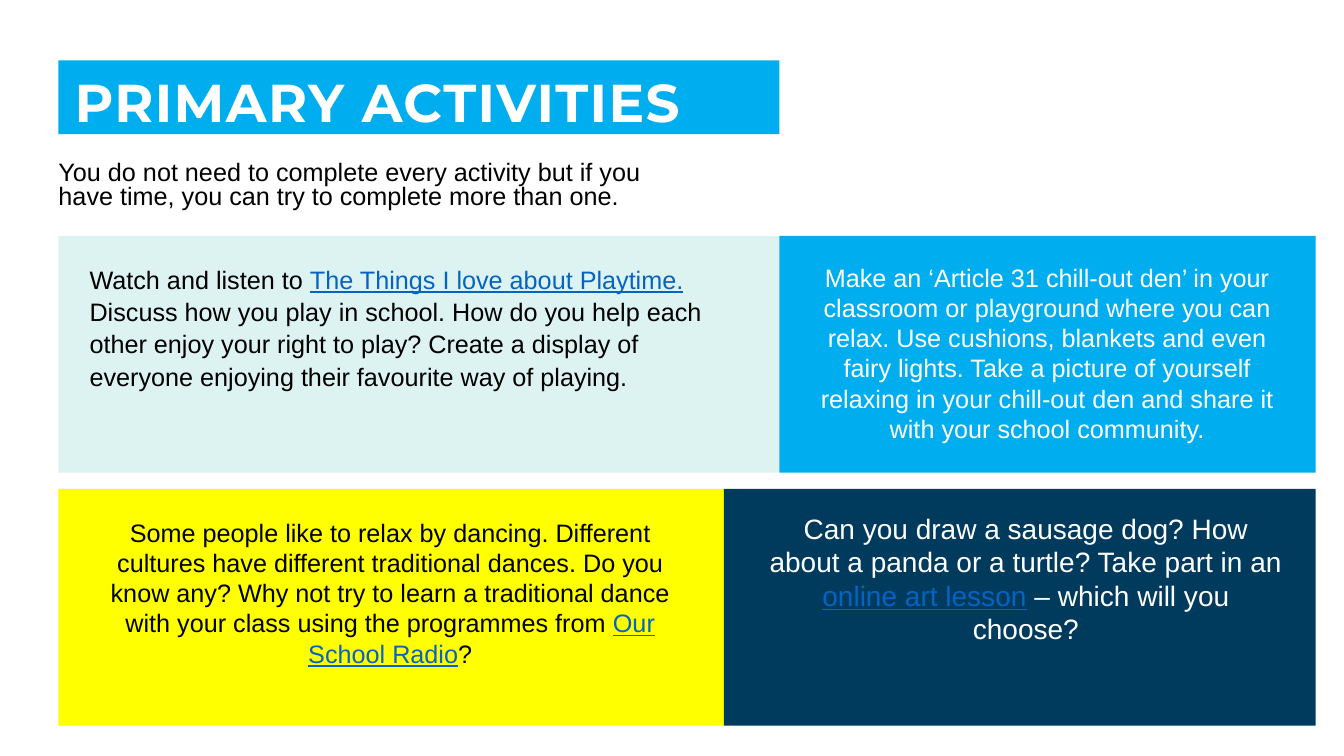
from dataclasses import dataclass
from typing import Any

from pptx import Presentation
from pptx.dml.color import RGBColor as Rgb
from pptx.enum.shapes import MSO_SHAPE as Shape
from pptx.enum.text import MSO_ANCHOR as Anchor, MSO_AUTO_SIZE as Fit, PP_ALIGN as Align
from pptx.util import Inches, Pt

Box = tuple[float, float, float, float]


@dataclass(frozen=True)
class Theme:
    sky: str = "00AEEF"
    mint: str = "DDF3F1"
    yellow: str = "FFFF00"
    navy: str = "003B5E"
    white: str = "FFFFFF"
    black: str = "000000"
    link: str = "0563C1"
    head: str = "Montserrat"
    body: str = "Arial"
    title: int = 38
    text: int = 18
    large: int = 20


@dataclass(frozen=True)
class Panel:
    row: int
    left: float
    right: float
    fill: str
    ink: str
    box: Box
    words: tuple[str, ...]  # plain and link text take turns
    size: int = Theme.text
    align: Align = Align.CENTER
    line: float = 1.0


THEME = Theme()
LEFT, RIGHT = 0.58, 13.05
TOP, HIGH, STEP = 2.34, 2.35, 2.51
SPLITS = (7.73, 7.18)

PANELS = (
    Panel(0, LEFT, SPLITS[0], THEME.mint, THEME.black, (0.79, 2.55, 6.5, 1.38), (
        "Watch and listen to ", "The Things I love about Playtime.",
        " Discuss how you play in school. How do you help each other enjoy your "
        "right to play? Create a display of everyone enjoying their favourite way "
        "of playing."), align=Align.LEFT, line=1.07),
    Panel(0, SPLITS[0], RIGHT, THEME.sky, THEME.white, (7.94, 2.55, 4.89, 1.92), (
        "Make an ‘Article 31 chill-out den’ in your classroom or playground where "
        "you can relax. Use cushions, blankets and even fairy lights. Take a picture "
        "of yourself relaxing in your chill-out den and share it with your school "
        "community.",)),
    Panel(1, LEFT, SPLITS[1], THEME.yellow, THEME.black, (0.78, 5.08, 6.18, 1.62), (
        "Some people like to relax by dancing. Different cultures have different "
        "traditional dances. Do you know any? Why not try to learn a traditional "
        "dance with your class using the programmes from ", "Our School Radio", "?")),
    Panel(1, SPLITS[1], RIGHT, THEME.navy, THEME.white, (7.52, 5.02, 5.31, 1.45), (
        "Can you draw a sausage dog? How about a panda or a turtle? Take part in an ",
        "online art lesson", " – which will you choose?"), size=THEME.large),
)


def apply(item: Any, form: dict[str, Any]) -> None:
    for name, value in form.items():
        setattr(item, name, value)


def paint(shape: Any, color: str) -> None:
    shape.fill.solid()
    shape.fill.fore_color.rgb = Rgb.from_string(color)
    shape.line.fill.background()


def add_run(para: Any, text: str, color: str, form: dict[str, Any]) -> Any:
    run = para.add_run()
    run.text = text
    apply(run.font, form)
    run.font.color.rgb = Rgb.from_string(color)
    return run


def add_text(slide: Any, box: Box, words: tuple[str, ...], ink: str, size: int,
             para: dict[str, Any], frame: dict[str, Any]) -> None:
    """Add a text box in which every second piece is styled as a link."""
    area = slide.shapes.add_textbox(*map(Inches, box)).text_frame
    apply(area, {"word_wrap": True, **frame})
    first = area.paragraphs[0]
    apply(first, para)
    for i, text in enumerate(words):
        is_link = i % 2 == 1
        add_run(first, text, THEME.link if is_link else ink,
                {"name": THEME.body, "size": Pt(size), "underline": is_link})


def add_title(slide: Any) -> None:
    title = slide.shapes.title
    apply(title, dict(zip(("left", "top", "width", "height"),
                          map(Inches, (LEFT, 0.6, SPLITS[0] - LEFT, 0.73)))))
    paint(title, THEME.sky)
    area = title.text_frame
    apply(area, {"auto_size": Fit.NONE, "word_wrap": True,
                 "vertical_anchor": Anchor.MIDDLE,
                 "margin_left": Inches(0.16), "margin_top": Inches(0.16),
                 "margin_right": Inches(0.12), "margin_bottom": 0})
    para = area.paragraphs[0]
    apply(para, {"alignment": Align.LEFT, "line_spacing": 0.9})
    run = add_run(para, "PRIMARY ACTIVITIES", THEME.white,
                  {"name": THEME.head, "size": Pt(THEME.title), "bold": True})
    run._r.get_or_add_rPr().set("spc", "100")


def add_panel(slide: Any, panel: Panel) -> None:
    place = (panel.left, TOP + panel.row * STEP, panel.right - panel.left, HIGH)
    tile = slide.shapes.add_shape(Shape.RECTANGLE, *map(Inches, place))
    tile.shadow.inherit = False
    paint(tile, panel.fill)
    add_text(slide, panel.box, panel.words, panel.ink, panel.size,
             {"alignment": panel.align, "line_spacing": panel.line},
             {"auto_size": Fit.SHAPE_TO_FIT_TEXT})


def main() -> None:
    deck = Presentation()
    apply(deck, {"slide_width": Inches(13.33), "slide_height": Inches(7.5)})
    slide = deck.slides.add_slide(deck.slide_layouts.get_by_name("Title Only"))
    add_title(slide)
    add_text(slide, (LEFT, 1.56, 6.21, 0.62), (
        "You do not need to complete every activity but if you have time, you can "
        "try to complete more than one.",), THEME.black, THEME.text,
        {"alignment": Align.LEFT, "line_spacing": 0.8}, {"margin_left": 0})
    for panel in PANELS:
        add_panel(slide, panel)
    deck.save("out.pptx")


if __name__ == "__main__":
    main()
